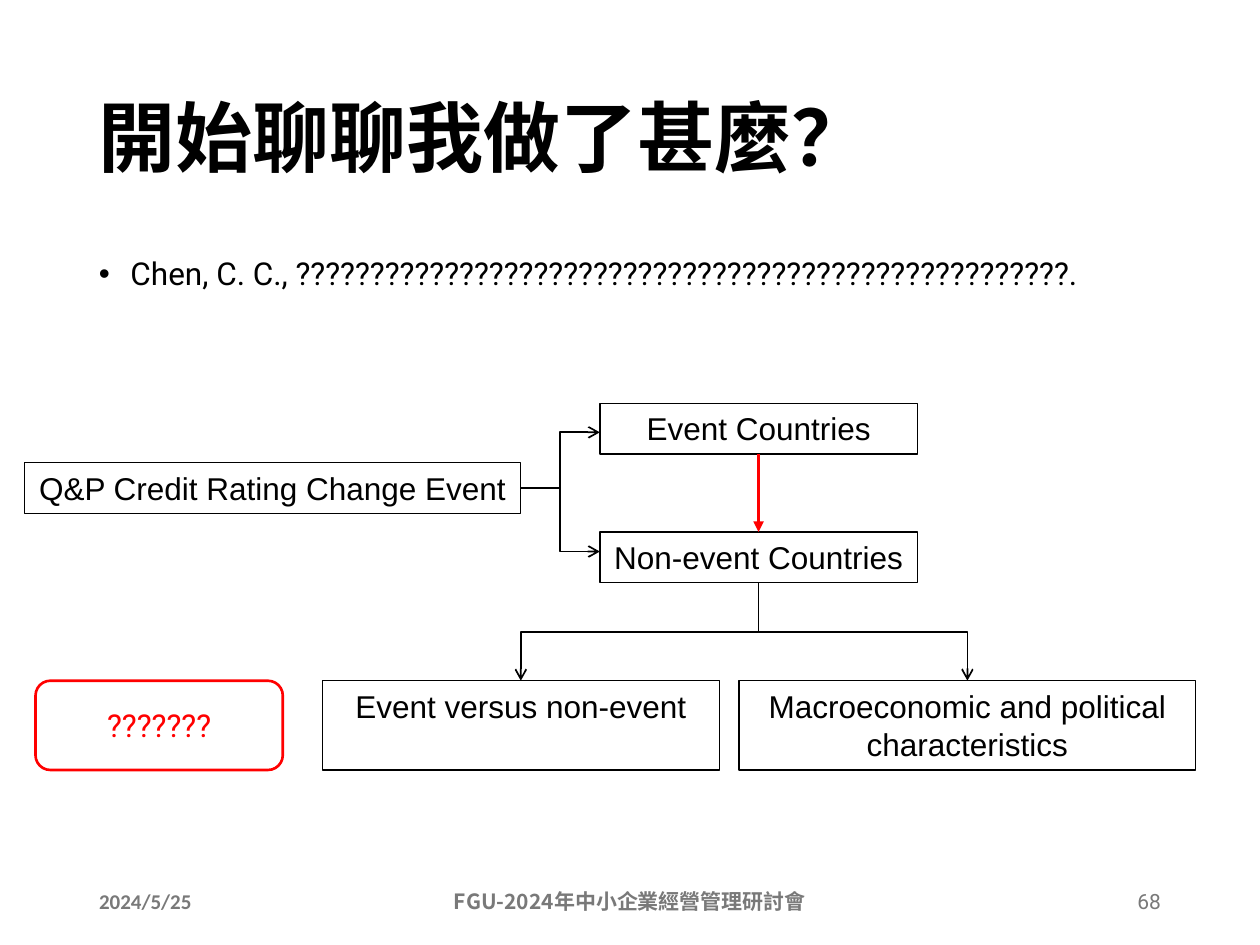
"""Build the slide on credit rating events and the countries they reach."""
from lxml import etree
from pptx import Presentation
from pptx.dml.color import RGBColor
from pptx.enum.shapes import MSO_CONNECTOR, MSO_SHAPE
from pptx.enum.text import MSO_ANCHOR, PP_ALIGN
from pptx.oxml.ns import qn
from pptx.util import Pt

BLACK = RGBColor(0x00, 0x00, 0x00)
GREY = RGBColor(0x79, 0x79, 0x79)
RED = RGBColor(0xFF, 0x00, 0x00)
LEFT, CENTER, RIGHT = PP_ALIGN.LEFT, PP_ALIGN.CENTER, PP_ALIGN.RIGHT
TOP, MIDDLE = MSO_ANCHOR.TOP, MSO_ANCHOR.MIDDLE
RECT, ROUNDED = MSO_SHAPE.RECTANGLE, MSO_SHAPE.ROUNDED_RECTANGLE
STRAIGHT, ELBOW = MSO_CONNECTOR.STRAIGHT, MSO_CONNECTOR.ELBOW
CJK, ROBOTO, CALIBRI, ARIAL = "Noto Sans CJK SC", "Roboto", "Calibri", "Arial"

TITLE = "開始聊聊我做了甚麼？"
CITATION = "Chen, C. C., ????????????????????????????????????????????????????."
FOOTERS = [
    ("2024/5/25", 49.5, 162, CALIBRI, True, LEFT),
    ("FGU-2024年中小企業經營管理研討會", 238.5, 243, CJK, True, CENTER),
    ("68", 508.5, 162, ROBOTO, False, RIGHT),
]
BOXES = {
    "rating": ("Q&P Credit Rating Change Event", 14, 264.3, 283.5, 29),
    "event": ("Event Countries", 342.8, 230.4, 181.4, 29),
    "non_event": ("Non-event Countries", 342.8, 304, 181.4, 29),
    "versus": ("Event versus non-event", 184.2, 389, 226.8, 51),
    "macro": ("Macroeconomic and political characteristics",
              422.3, 389, 261, 51),
}
QUESTION = ("???????", 20.3, 389, 141.3, 51)
RATING_EXIT = (297.5, 278.8)
RATING_TARGETS = [(342.8, 315.2), (342.8, 247.1)]
SPLIT_TARGETS = [(297.6, 389), (552.8, 389)]


def write(box, text, size, font, color, align, anchor, bold=False):
    frame = box.text_frame
    frame.word_wrap = True
    frame.vertical_anchor = anchor
    para = frame.paragraphs[0]
    para.alignment = align
    span = para.add_run()
    span.text = text
    span.font.size = Pt(size)
    span.font.name = font
    span.font.bold = bold
    span.font.color.rgb = color
    if font == CJK:
        latin = span.font._element.find(qn("a:latin"))
        east_asian = etree.Element(qn("a:ea"), typeface=font)
        latin.addnext(east_asian)
    return para


def add_text(page, place, *style):
    box = page.shapes.add_textbox(*map(Pt, place))
    return write(box, *style)


def add_box(page, shape, content, font, color, width, anchor):
    text, *place = content
    box = page.shapes.add_shape(shape, *map(Pt, place))
    box.shadow.inherit = False
    box.fill.background()
    box.line.color.rgb = color
    box.line.width = Pt(width)
    write(box, text, 18, font, color, CENTER, anchor)


def add_arrow(page, kind, start, end, color, width, head):
    arrow = page.shapes.add_connector(kind, *map(Pt, (*start, *end)))
    arrow.line.color.rgb = color
    arrow.line.width = Pt(width)
    properties = arrow._element.spPr
    line = properties.find(qn("a:ln"))
    etree.SubElement(line, qn("a:tailEnd"), type=head)
    etree.SubElement(properties, qn("a:effectLst"))
    return arrow


def add_downward_elbow(page, start, end):
    mid_x, mid_y = (start[0] + end[0]) / 2, (start[1] + end[1]) / 2
    half_x, half_y = (end[0] - start[0]) / 2, (end[1] - start[1]) / 2
    arrow = add_arrow(page, ELBOW, (mid_x - half_y, mid_y + half_x),
                      (mid_x + half_y, mid_y - half_x), BLACK, 1, "arrow")
    arrow._element.spPr.find(qn("a:xfrm")).set("rot", str(90 * 60000))


def bottom_center(name):
    _, left, top, width, height = BOXES[name]
    return left + width / 2, top + height


def main():
    deck = Presentation()
    deck.slide_width, deck.slide_height = Pt(720), Pt(540)
    page = deck.slides.add_slide(deck.slide_layouts[6])

    title = add_text(page, (49.5, 28.8, 621, 104.4),
                     TITLE, 44, CJK, BLACK, LEFT, MIDDLE, True)
    title.line_spacing = 0.9
    citation = add_text(page, (49.5, 144, 621, 342.7),
                        CITATION, 18, ROBOTO, BLACK, LEFT, TOP)
    citation.line_spacing = 0.9
    indent = citation._p.get_or_add_pPr()
    indent.set("marL", str(Pt(18)))
    indent.set("indent", str(-Pt(18)))
    etree.SubElement(indent, qn("a:buFont"), typeface=ARIAL)
    etree.SubElement(indent, qn("a:buChar"), char="•")
    for text, left, width, font, bold, align in FOOTERS:
        add_text(page, (left, 500.5, width, 28.8),
                 text, 12, font, GREY, align, MIDDLE, bold)

    for content in BOXES.values():
        add_box(page, RECT, content, ARIAL, BLACK, 0.75, TOP)
    add_box(page, ROUNDED, QUESTION, ROBOTO, RED, 1.5, MIDDLE)

    for target in RATING_TARGETS:
        add_arrow(page, ELBOW, RATING_EXIT, target, BLACK, 1, "arrow")
    for target in SPLIT_TARGETS:
        add_downward_elbow(page, bottom_center("non_event"), target)
    start = bottom_center("event")
    end = (start[0], BOXES["non_event"][2])
    add_arrow(page, STRAIGHT, start, end, RED, 2, "triangle")
    deck.save("out.pptx")


if __name__ == "__main__":
    main()
